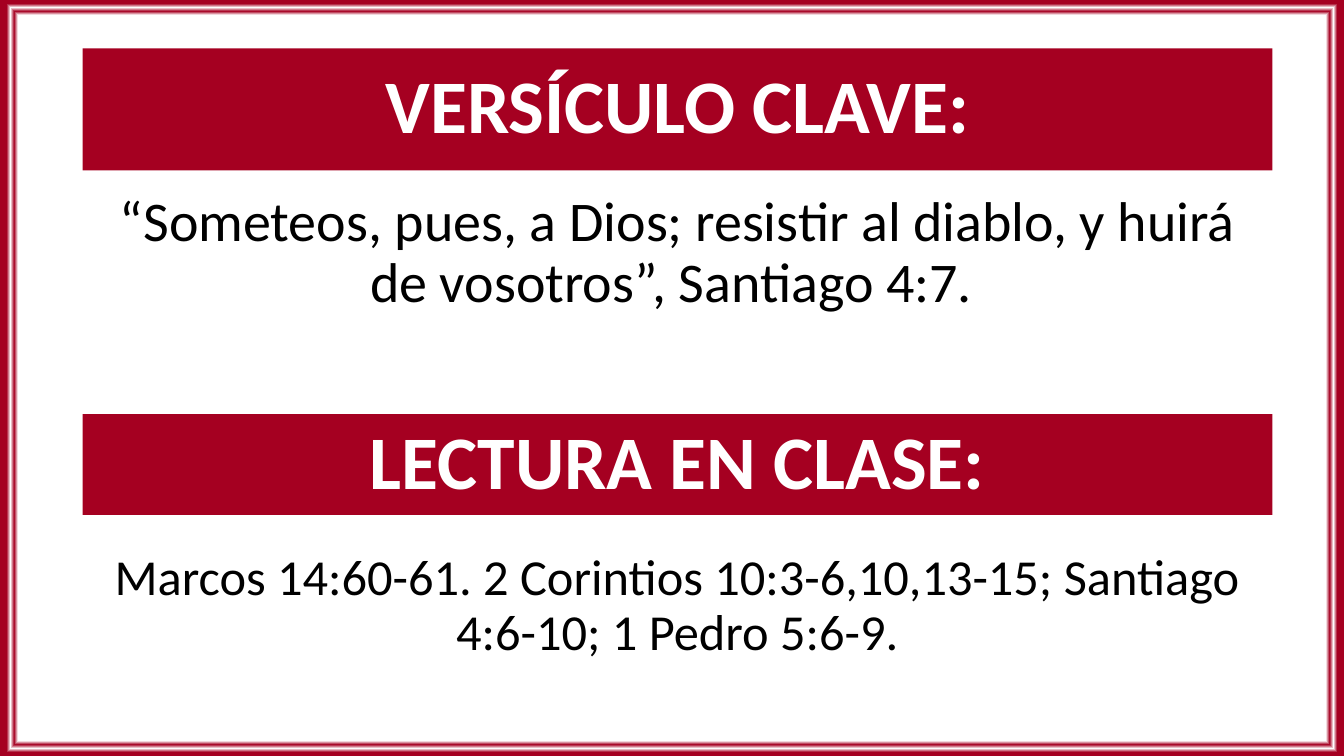
import lxml.etree
import pptx
import pptx.dml.color
import pptx.enum.shapes
import pptx.enum.text
import pptx.oxml.ns
import pptx.util

Inches = pptx.util.Inches
Pt = pptx.util.Pt
CRIMSON = pptx.dml.color.RGBColor(0xA5, 0x00, 0x21)
WHITE = pptx.dml.color.RGBColor(0xFF, 0xFF, 0xFF)
BLACK = pptx.dml.color.RGBColor(0x00, 0x00, 0x00)
FRAME_STOPS = [(96, WHITE), (97, CRIMSON), (98, WHITE), (99, CRIMSON)]

LEFT, WIDTH = 0.82, 11.8
SECTIONS = [
    ("VERSÍCULO CLAVE:", 0.48, 1.21,
     "“Someteos, pues, a Dios; resistir al diablo, y huirá de vosotros”, Santiago 4:7. ", 1.66, 40),
    ("LECTURA EN CLASE:", 4.11, 1.0,
     "Marcos 14:60-61. 2 Corintios 10:3-6,10,13-15; Santiago 4:6-10; 1 Pedro 5:6-9.", 1.82, 36),
]


def paint_frame(page):
    page.background.fill.gradient()
    gradient = page.element.find(".//" + pptx.oxml.ns.qn("a:gradFill"))
    stops = "".join(
        f'<a:gs pos="{percent * 1000}"><a:srgbClr val="{color}"/></a:gs>'
        for percent, color in FRAME_STOPS)
    frame = lxml.etree.fromstring(
        f'<a:gradFill {pptx.oxml.ns.nsdecls("a")} rotWithShape="1"><a:gsLst>{stops}</a:gsLst>'
        '<a:path path="shape"><a:fillToRect l="50000" t="50000" r="50000" b="50000"/></a:path>'
        '</a:gradFill>')
    gradient.getparent().replace(gradient, frame)


def write_text(box, text, size, color, bold=False):
    text_frame = box.text_frame
    text_frame.word_wrap = True
    text_frame.vertical_anchor = pptx.enum.text.MSO_ANCHOR.MIDDLE
    para = text_frame.paragraphs[0]
    para.text = text
    para.alignment = pptx.enum.text.PP_ALIGN.CENTER
    para.line_spacing = 0.9
    para.space_before = Pt(10)
    para.font.name = "Calibri"
    para.font.size = Pt(size)
    para.font.bold = bold
    para.font.color.rgb = color


def add_section(page, left, top, width, title, banner_height, passage, passage_height, size):
    banner = page.shapes.add_shape(
        pptx.enum.shapes.MSO_SHAPE.RECTANGLE,
        Inches(left), Inches(top), Inches(width), Inches(banner_height))
    banner.shadow.inherit = False
    banner.fill.solid()
    banner.fill.fore_color.rgb = CRIMSON
    banner.line.fill.background()
    write_text(banner, title, 54, WHITE, bold=True)

    passage_box = page.shapes.add_textbox(
        Inches(left), Inches(top + banner_height), Inches(width), Inches(passage_height))
    write_text(passage_box, passage, size, BLACK)


def main():
    deck = pptx.Presentation()
    deck.slide_width = Inches(13.33)
    deck.slide_height = Inches(7.5)
    page = deck.slides.add_slide(deck.slide_layouts[6])
    paint_frame(page)
    for title, top, banner_height, passage, passage_height, size in SECTIONS:
        add_section(page, LEFT, top, WIDTH, title, banner_height, passage, passage_height, size)
    deck.save("out.pptx")


if __name__ == "__main__":
    main()
